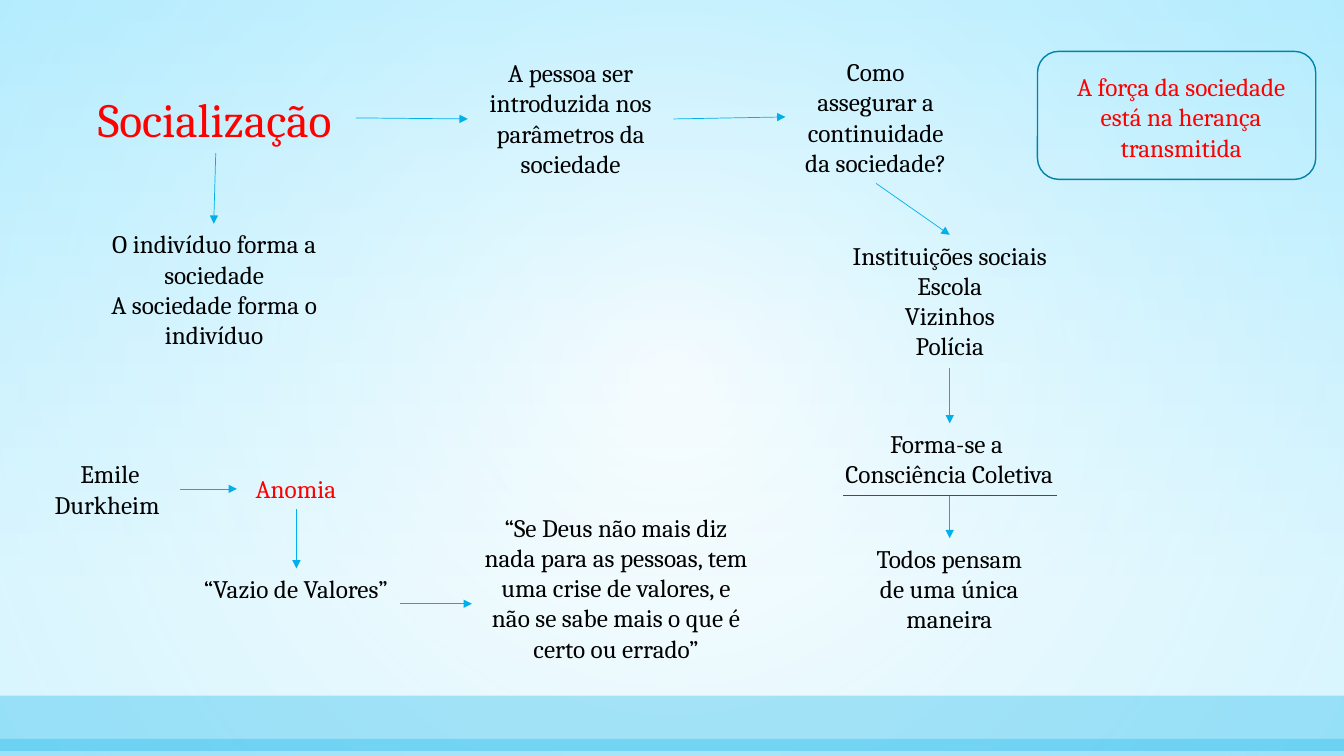
from lxml.etree import SubElement
from pptx import Presentation
from pptx.dml.color import RGBColor
from pptx.enum.shapes import MSO_CONNECTOR, MSO_SHAPE
from pptx.enum.text import MSO_ANCHOR, MSO_AUTO_SIZE, PP_ALIGN
from pptx.oxml import parse_xml
from pptx.oxml.ns import nsdecls, qn
from pptx.util import Inches, Pt

COLORS = {
    "text": "000000",
    "accent": "FF0000",
    "arrow": "00B0EA",
    "frame": "0082AD",
    "sky": "C8F1FF",
    "edge": "91E4FF",
    "white": "FFFFFF",
}
FONT = "Cambria"

# Text boxes: left, top, width, height, colour, paragraphs
NOTES = [
    (4.64, 0.52, 2.04, 1.31, "text", ["A pessoa ser introduzida nos parâmetros da sociedade"]),
    (0.86, 2.22, 2.53, 1.31, "text",
     ["O indivíduo forma a sociedade", "A sociedade forma o indivíduo"]),
    (7.79, 0.51, 1.79, 1.31, "text", ["Como assegurar a continuidade da sociedade?"]),
    (8.14, 2.33, 2.56, 1.31, "text",
     ["Instituições sociais", "Escola", "Vizinhos", "Polícia"]),
    (8.16, 4.2, 2.51, 0.71, "text", ["Forma-se a ", "Consciência Coletiva"]),
    (8.54, 5.34, 1.75, 1.01, "text", ["Todos pensam de uma única maneira"]),
    (10.47, 0.66, 2.49, 1.01, "accent", ["A força da sociedade está na herança transmitida"]),
    (0.39, 4.5, 1.4, 0.71, "text", ["Emile Durkheim "]),
    (2.35, 4.65, 1.17, 0.4, "accent", ["Anomia"]),
    (1.9, 5.64, 2.07, 0.71, "text", ["“Vazio de Valores”"]),
    (4.68, 5.03, 2.86, 1.92, "text",
     ["“Se Deus não mais diz nada para as pessoas, tem uma crise de valores, "
      "e não se sabe mais o que é certo ou errado”"]),
]

# Arrows: start x, start y, end x, end y
ARROWS = [
    (3.53, 1.17, 4.64, 1.18),
    (2.14, 1.52, 2.12, 2.22),
    (6.68, 1.18, 7.79, 1.16),
    (8.69, 1.82, 9.42, 2.33),
    (9.42, 3.65, 9.42, 4.2),
    (9.42, 4.91, 9.42, 5.34),
    (1.79, 4.85, 2.35, 4.85),
    (2.94, 5.05, 2.94, 5.64),
    (3.97, 5.99, 4.68, 5.99),
]


def rgb(name):
    return RGBColor.from_string(COLORS[name])


def set_attributes(target, values):
    for name, value in values.items():
        setattr(target, name, value)


def place(shape, *bounds):
    names = ("left", "top", "width", "height")
    set_attributes(shape, dict(zip(names, map(Inches, bounds))))


def write_text(shape, paragraphs, color, size, frame_format, para_format):
    frame = shape.text_frame
    frame.text = "\n".join(paragraphs)
    set_attributes(frame, frame_format)
    for para in frame.paragraphs:
        set_attributes(para, para_format)
        for span in para.runs:
            set_attributes(span.font, {"name": FONT, "size": Pt(size), "bold": False})
            span.font.color.rgb = rgb(color)


def add_title(page):
    title = page.shapes.title
    place(title, 0.74, 0.82, 2.78, 0.7)
    write_text(
        title, ["Socialização"], "accent", 34,
        {"word_wrap": True, "auto_size": MSO_AUTO_SIZE.NONE,
         "vertical_anchor": MSO_ANCHOR.BOTTOM},
        {"alignment": PP_ALIGN.CENTER, "line_spacing": 0.9},
    )


def add_note(page, left, top, width, height, color, paragraphs):
    box = page.shapes.add_textbox(*map(Inches, (left, top, width, height)))
    write_text(
        box, paragraphs, color, 18,
        {"word_wrap": True, "auto_size": MSO_AUTO_SIZE.SHAPE_TO_FIT_TEXT},
        {"alignment": PP_ALIGN.CENTER},
    )


def add_line(page, points, color, arrowhead=False):
    line = page.shapes.add_connector(MSO_CONNECTOR.STRAIGHT, *map(Inches, points))
    line.line.color.rgb = rgb(color)
    line.line.width = Pt(0.5)
    if arrowhead:
        SubElement(line.line._get_or_add_ln(), qn("a:tailEnd"), type="triangle")
    SubElement(line._element.spPr, qn("a:effectLst"))


def add_plain_shape(page, kind, *bounds):
    shape = page.shapes.add_shape(kind, *map(Inches, bounds))
    shape.shadow.inherit = False
    shape.fill.background()
    shape.line.fill.background()
    return shape


def add_band(page, top, height, opacity):
    band = add_plain_shape(page, MSO_SHAPE.RECTANGLE, 0, top, 13.33, height)
    band.fill.solid()
    band.fill.fore_color.rgb = rgb("arrow")
    color = band._element.spPr.find(qn("a:solidFill"))[0]
    SubElement(color, qn("a:alpha"), val=str(opacity * 1000))


def add_glow(page):
    glow = add_plain_shape(page, MSO_SHAPE.RECTANGLE, 0, 0, 13.33, 7.5)
    stops = "".join(
        f'<a:gs pos="{position * 1000}"><a:srgbClr val="{COLORS[color]}">'
        f'<a:alpha val="{opacity * 1000}"/></a:srgbClr></a:gs>'
        for position, color, opacity in [(0, "white", 49), (100, "edge", 35)]
    )
    gradient = parse_xml(
        f'<a:gradFill {nsdecls("a")} rotWithShape="1"><a:gsLst>{stops}</a:gsLst>'
        '<a:path path="circle"><a:fillToRect l="50000" t="50000" r="50000" b="50000"/>'
        "</a:path></a:gradFill>"
    )
    properties = glow._element.spPr
    properties.replace(properties.find(qn("a:noFill")), gradient)


def paint_background(page):
    fill = page.background.fill
    fill.gradient()
    fill.gradient_angle = 270
    for stop, position, color in zip(fill.gradient_stops, (0, 0.79), ("sky", "white")):
        stop.position = position
        stop.color.rgb = rgb(color)


def add_frame(page):
    frame = add_plain_shape(page, MSO_SHAPE.ROUNDED_RECTANGLE, 10.29, 0.51, 2.76, 1.27)
    frame.line.color.rgb = rgb("frame")
    frame.line.width = Pt(1)


def main():
    deck = Presentation()
    set_attributes(deck, {"slide_width": Inches(13.33), "slide_height": Inches(7.5)})
    page = deck.slides.add_slide(deck.slide_layouts[5])

    # Backdrop
    paint_background(page)
    add_glow(page)
    add_band(page, 6.9, 0.55, 30)
    add_band(page, 7.33, 0.17, 28)

    # Concept map; the title goes above the backdrop
    page.shapes._spTree.append(page.shapes.title._element)
    add_title(page)
    for note in NOTES:
        add_note(page, *note)
    for points in ARROWS:
        add_line(page, points, "arrow", arrowhead=True)

    # Emphasis
    add_line(page, (8.36, 4.91, 10.48, 4.91), "accent")
    add_frame(page)

    deck.save("out.pptx")


if __name__ == "__main__":
    main()
